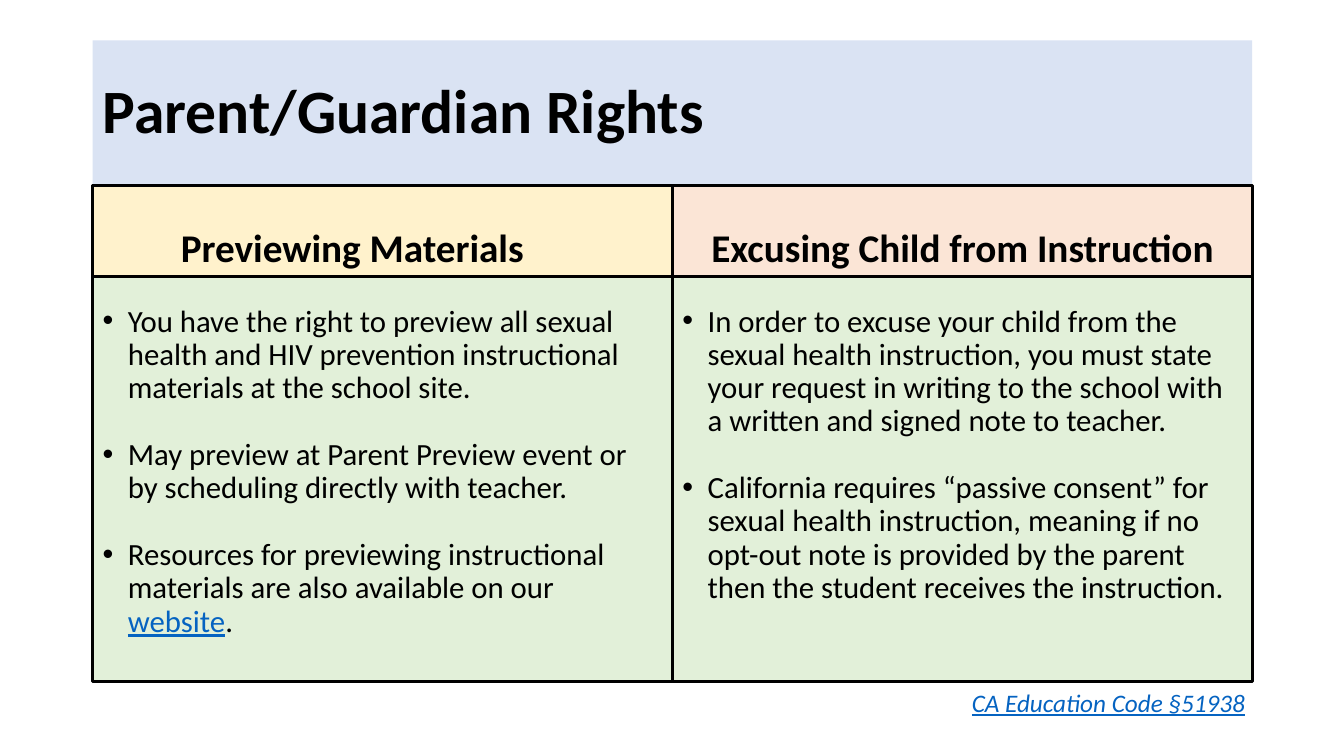
from dataclasses import dataclass

from lxml import etree
from pptx import Presentation
from pptx.dml.color import RGBColor
from pptx.enum.shapes import MSO_SHAPE
from pptx.enum.text import MSO_ANCHOR, PP_ALIGN
from pptx.oxml.ns import qn
from pptx.util import Inches, Pt

RECTANGLE = MSO_SHAPE.RECTANGLE
TOP, MIDDLE, BOTTOM = MSO_ANCHOR.TOP, MSO_ANCHOR.MIDDLE, MSO_ANCHOR.BOTTOM
LEFT, CENTER = PP_ALIGN.LEFT, PP_ALIGN.CENTER

TITLE = "Parent/Guardian Rights"
CITATION = "CA Education Code §51938"
LINK_WORD = "website"
COLUMNS = [
    {
        "heading": "Previewing Materials",
        "fill": "FFF2CC",
        "right_inset": 0.7,
        "bullets": [
            "You have the right to preview all sexual health and HIV prevention "
            "instructional materials at the school site.",
            "May preview at Parent Preview event or by scheduling directly with teacher.",
            "Resources for previewing instructional materials are also available "
            "on our website.",
        ],
    },
    {
        "heading": "Excusing Child from Instruction",
        "fill": "FBE5D6",
        "right_inset": 0.1,
        "bullets": [
            "In order to excuse your child from the sexual health instruction, you "
            "must state your request in writing to the school with a written and "
            "signed note to teacher.",
            "California requires “passive consent” for sexual health instruction, "
            "meaning if no opt-out note is provided by the parent then the student "
            "receives the instruction.",
        ],
    },
]


@dataclass(frozen=True)
class Theme:
    font: str = "Calibri"
    text: str = "000000"
    link: str = "0563C1"
    title_fill: str = "DAE3F3"
    body_fill: str = "E2F0D9"
    title_size: int = 44
    heading_size: int = 28
    body_size: int = 22
    citation_size: int = 18
    border_width: float = 2.25
    line_spacing: float = 0.9
    bullet_gap: int = 24


THEME = Theme()
MARGIN, COLUMN_WIDTH = 0.92, 5.75
TITLE_TOP, TITLE_HEIGHT = 0.4, 1.45
HEADING_TOP, HEADING_HEIGHT = 1.84, 0.9
BODY_TOP, BODY_HEIGHT = HEADING_TOP + HEADING_HEIGHT, 4.02
BODY_TOP_INSET = 0.29
BULLET_INDENT = 0.25


def add_panel(slide, box, fill, anchor, bordered=True):
    shape = slide.shapes.add_shape(RECTANGLE, *map(Inches, box))
    shape.shadow.inherit = False
    shape.fill.solid()
    shape.fill.fore_color.rgb = RGBColor.from_string(fill)
    if bordered:
        shape.line.color.rgb = RGBColor.from_string(THEME.text)
        shape.line.width = Pt(THEME.border_width)
    else:
        shape.line.fill.background()
    shape.text_frame.word_wrap = True
    shape.text_frame.vertical_anchor = anchor
    return shape.text_frame


def style_paragraph(paragraph, size, bold=False, alignment=LEFT):
    paragraph.alignment = alignment
    paragraph.line_spacing = THEME.line_spacing
    paragraph.font.name = THEME.font
    paragraph.font.size = Pt(size)
    paragraph.font.bold = bold
    paragraph.font.color.rgb = RGBColor.from_string(THEME.text)


def style_link(font):
    font.underline = True
    font.color.rgb = RGBColor.from_string(THEME.link)


def add_bullet_mark(paragraph):
    properties = paragraph._p.get_or_add_pPr()
    properties.set("marL", str(Inches(BULLET_INDENT)))
    properties.set("indent", str(-Inches(BULLET_INDENT)))
    etree.SubElement(properties, qn("a:buFont")).set("typeface", "Arial")
    etree.SubElement(properties, qn("a:buChar")).set("char", "•")


def fill_bullets(frame, bullets):
    for index, bullet in enumerate(bullets):
        paragraph = frame.add_paragraph() if index else frame.paragraphs[0]
        style_paragraph(paragraph, THEME.body_size)
        if index:
            paragraph.space_before = Pt(THEME.bullet_gap)
        add_bullet_mark(paragraph)
        for part in filter(None, bullet.partition(LINK_WORD)):
            run = paragraph.add_run()
            run.text = part
            if part == LINK_WORD:
                style_link(run.font)


def add_column(slide, left, column):
    heading = add_panel(slide, (left, HEADING_TOP, COLUMN_WIDTH, HEADING_HEIGHT),
                        column["fill"], BOTTOM)
    heading.margin_right = Inches(column["right_inset"])
    heading.text = column["heading"]
    style_paragraph(heading.paragraphs[0], THEME.heading_size, True, CENTER)

    body = add_panel(slide, (left, BODY_TOP, COLUMN_WIDTH, BODY_HEIGHT),
                     THEME.body_fill, TOP)
    body.margin_top = Inches(BODY_TOP_INSET)
    fill_bullets(body, column["bullets"])


def main():
    presentation = Presentation()
    presentation.slide_width = Inches(13.33)
    presentation.slide_height = Inches(7.5)
    slide = presentation.slides.add_slide(presentation.slide_layouts[6])

    title = add_panel(slide, (MARGIN, TITLE_TOP, 2 * COLUMN_WIDTH, TITLE_HEIGHT),
                      THEME.title_fill, MIDDLE, bordered=False)
    title.text = TITLE
    style_paragraph(title.paragraphs[0], THEME.title_size, True)

    for index, column in enumerate(COLUMNS):
        add_column(slide, MARGIN + index * COLUMN_WIDTH, column)

    citation = slide.shapes.add_textbox(*map(Inches, (9.54, 6.77, 3.5, 0.4))).text_frame
    citation.word_wrap = True
    citation.text = CITATION
    paragraph = citation.paragraphs[0]
    style_paragraph(paragraph, THEME.citation_size)
    paragraph.line_spacing = 1.0
    paragraph.font.italic = True
    style_link(paragraph.font)

    presentation.save("out.pptx")


if __name__ == "__main__":
    main()
